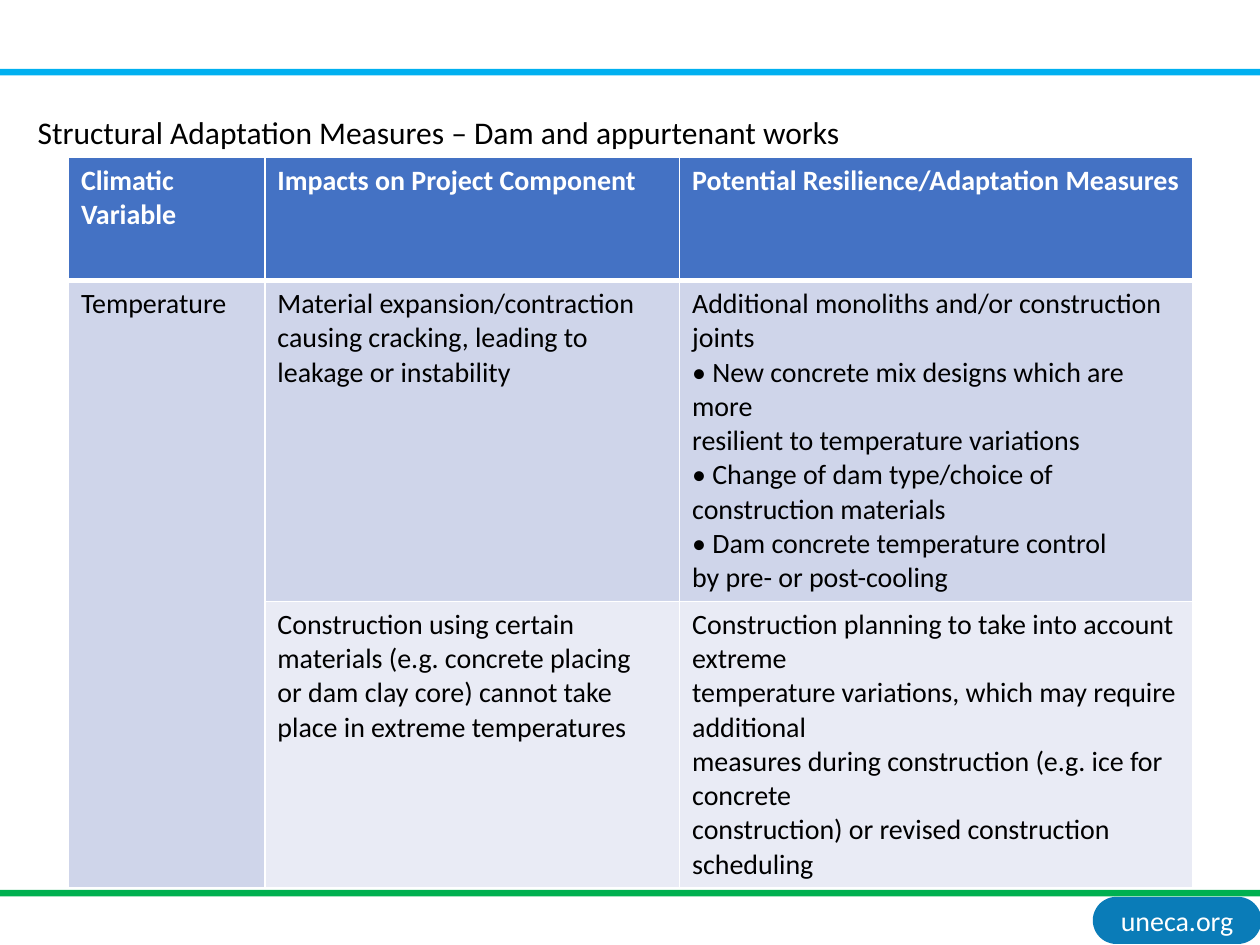
from lxml.etree import SubElement
from pptx import Presentation
from pptx.dml.color import RGBColor
from pptx.enum.shapes import MSO_SHAPE
from pptx.enum.text import MSO_ANCHOR, PP_ALIGN
from pptx.oxml.ns import qn
from pptx.util import Cm, Pt

WHITE = RGBColor(0xFF, 0xFF, 0xFF)
BLACK = RGBColor(0x00, 0x00, 0x00)
SKY = RGBColor(0x00, 0xB0, 0xF0)
GREEN = RGBColor(0x00, 0xB0, 0x50)
BADGE = RGBColor(0x0A, 0x7C, 0xB8)
HEADER = RGBColor(0x44, 0x72, 0xC4)
BAND_DARK = RGBColor(0xCF, 0xD5, 0xEA)
BAND_LIGHT = RGBColor(0xE9, 0xEB, 0xF5)

COLUMNS = [3.96, 8.36, 10.34]
ROWS = [
    (2.49, HEADER, ["Climatic Variable", "Impacts on Project Component",
                    "Potential Resilience/Adaptation Measures"]),
    (6.35, BAND_DARK, [
        "Temperature",
        "Material expansion/contraction\n"
        "causing cracking, leading to\n"
        "leakage or instability",
        "Additional monoliths and/or construction joints\n"
        "• New concrete mix designs which are more\n"
        "resilient to temperature variations\n"
        "• Change of dam type/choice of construction materials\n"
        "• Dam concrete temperature control\n"
        "by pre- or post-cooling"]),
    (5.66, BAND_LIGHT, [
        "",
        "Construction using certain\n"
        "materials (e.g. concrete placing\n"
        "or dam clay core) cannot take\n"
        "place in extreme temperatures",
        "Construction planning to take into account extreme\n"
        "temperature variations, which may require additional\n"
        "measures during construction (e.g. ice for concrete\n"
        "construction) or revised construction scheduling"]),
]


class SlideBuilder:
    """Holds the text style and the current slide, and adds elements to it."""

    def __init__(self, slide, font="Calibri"):
        self.slide = slide
        self.font = font

    def add_text(self, tf, text, color, size=16, bold=False, align=PP_ALIGN.LEFT):
        style = {"name": self.font, "size": Pt(size), "bold": bold}
        tf.text = text
        for p in tf.paragraphs:
            p.alignment = align
            for r in p.runs:
                for name, value in style.items():
                    setattr(r.font, name, value)
                r.font.color.rgb = color

    def block(self, kind, x, y, w, h, color):
        s = self.slide.shapes.add_shape(kind, Cm(x), Cm(y), Cm(w), Cm(h))
        s.shadow.inherit = False
        s.fill.solid()
        s.fill.fore_color.rgb = color
        s.line.fill.background()
        return s

    def bar(self, y, color):
        self.block(MSO_SHAPE.RECTANGLE, 0, y, 25.4, 0.13, color)

    def badge(self, x, y, w, h, text):
        s = self.block(MSO_SHAPE.ROUNDED_RECTANGLE, x, y, w, h, BADGE)
        s.adjustments[0] = 0.5
        tf = s.text_frame
        for side in ("left", "top", "right", "bottom"):
            setattr(tf, f"margin_{side}", Cm(0.13))
        tf.vertical_anchor = MSO_ANCHOR.MIDDLE
        self.add_text(tf, text, WHITE, align=PP_ALIGN.CENTER)

    def title(self, x, y, w, h, text):
        tf = self.slide.shapes.add_textbox(Cm(x), Cm(y), Cm(w), Cm(h)).text_frame
        tf.word_wrap = False
        self.add_text(tf, text, BLACK, size=18)

    def borders(self, cell, widths):
        tc_pr = cell._tc.get_or_add_tcPr()
        for side, width in widths.items():
            ln = SubElement(tc_pr, qn(f"a:ln{side}"), w=str(Pt(width)))
            fill = SubElement(ln, qn("a:solidFill"))
            SubElement(fill, qn("a:srgbClr"), val=str(WHITE))

    def table(self, x, y, columns, rows):
        heights = [height for height, _, _ in rows]
        frame = self.slide.shapes.add_table(
            len(rows), len(columns), Cm(x), Cm(y), Cm(sum(columns)), Cm(sum(heights)))
        table = frame.table
        for column, width in zip(table.columns, columns):
            column.width = Cm(width)
        for i, (height, color, texts) in enumerate(rows):
            table.rows[i].height = Cm(height)
            header = i == 0
            widths = {"L": 1, "R": 1, "T": 3 if i == 1 else 1, "B": 3 if header else 1}
            for cell, text in zip(table.rows[i].cells, texts):
                self.borders(cell, widths)
                cell.fill.solid()
                cell.fill.fore_color.rgb = color
                self.add_text(cell.text_frame, text, WHITE if header else BLACK, bold=header)
        table.cell(1, 0).merge(table.cell(2, 0))


def main():
    prs = Presentation()
    prs.slide_width, prs.slide_height = Cm(25.4), Cm(19.05)
    page = SlideBuilder(prs.slides.add_slide(prs.slide_layouts[6]))
    page.badge(22.03, 18.08, 3.4, 0.95, "uneca.org")
    page.bar(1.39, SKY)
    page.bar(17.94, GREEN)
    page.table(1.38, 3.17, COLUMNS, ROWS)
    page.title(0.51, 2.16, 16.87, 1.02,
               "Structural Adaptation Measures – Dam and appurtenant works")
    prs.save("out.pptx")


if __name__ == "__main__":
    main()
